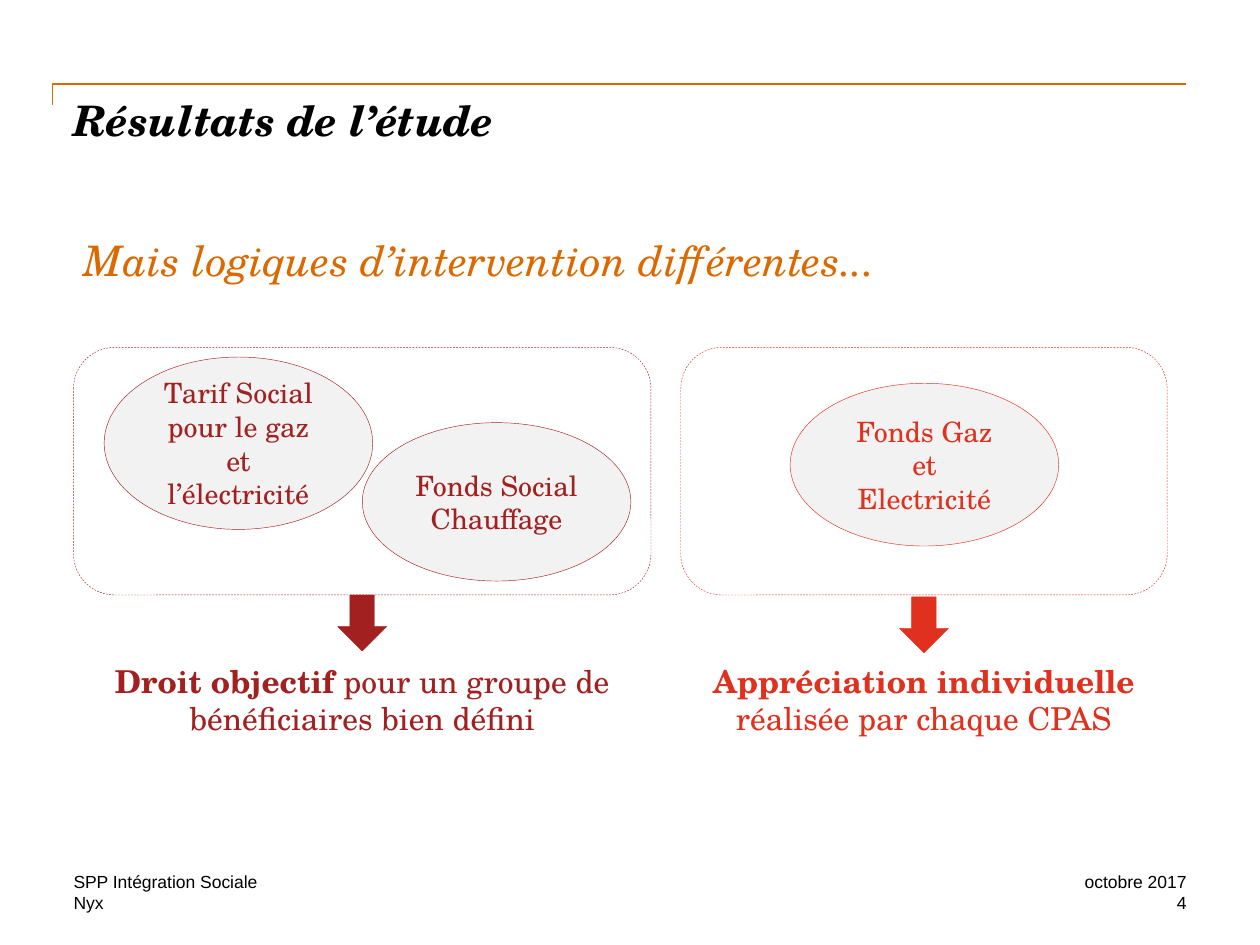
from lxml import etree
from pptx import Presentation
from pptx.dml.color import RGBColor
from pptx.enum import dml, shapes, text
from pptx.oxml.ns import qn
from pptx.util import Pt

SERIF, SANS = "TeX Gyre Schola", "Arial"
BLACK, ORANGE, GREY = "000000", "DC6900", "F2F2F2"
LEFT, RIGHT = 42, 678
SHAPE = shapes.MSO_SHAPE
ALIGN, ANCHOR = text.PP_ALIGN, text.MSO_ANCHOR

# Content: lengths in points, boxes as (left, top, width, height)
TITLE = "Résultats de l’étude"
SUBTITLE = "Mais logiques d’intervention différentes..."
FOOTER = [  # words, top, width, alignment
    ("SPP Intégration Sociale", 498, 414, ALIGN.LEFT),
    ("Nyx", 510, 204, ALIGN.LEFT),
    ("octobre 2017", 498, 120, ALIGN.RIGHT),
    ("4", 510, 120, ALIGN.RIGHT),
]
GROUPS = [
    dict(color="A32020", left=42, width=330, caption_width=300, arrow_top=340,
         funds=[("Tarif Social pour le gaz et l’électricité", 59.5, 204, 98.5),
                ("Fonds Social Chauffage", 207, 241.5, 90.5)],
         caption=("Droit objectif", " pour un groupe de bénéficiaires bien défini")),
    dict(color="E0301E", left=389, width=278, caption_width=268, arrow_top=341,
         funds=[("Fonds Gaz et Electricité", 451.5, 219, 93)],
         caption=("Appréciation individuelle ", "réalisée par chaque CPAS")),
]
FRAME_TOP, FRAME_HEIGHT = 198.5, 141.5
FUND_WIDTH = 153.5
ARROW_WIDTH, ARROW_HEIGHT = 28, 32
CAPTION_TOP, CAPTION_HEIGHT = 378, 63


def rgb(color):
    return RGBColor.from_string(color)


def set_font(font, name, size, color, bold=False, italic=False):
    font.name, font.size = name, Pt(size)
    font.bold, font.italic = bold, italic
    font.color.rgb = rgb(color)


def prepare(tf, margin=True, anchor=ANCHOR.TOP):
    tf.word_wrap, tf.auto_size = True, text.MSO_AUTO_SIZE.NONE
    tf.vertical_anchor = anchor
    if not margin:
        tf.margin_left = tf.margin_top = tf.margin_right = tf.margin_bottom = 0
    return tf.paragraphs[0]


def add_text(box, runs, align=ALIGN.LEFT, anchor=ANCHOR.TOP):
    tf = s.shapes.add_textbox(*map(Pt, box)).text_frame
    p = prepare(tf, False, anchor)
    p.alignment = align
    for words in runs:
        p.add_run().text = words
    return p


def add_shape(kind, box, color, fill=None):
    sp = s.shapes.add_shape(kind, *map(Pt, box))
    sp.shadow.inherit = False
    if fill:
        sp.fill.solid()
        sp.fill.fore_color.rgb = rgb(fill)
    else:
        sp.fill.background()
    sp.line.color.rgb = rgb(color)
    sp.line.width = Pt(0.25)
    return sp


prs = Presentation()
prs.slide_width, prs.slide_height = Pt(720), Pt(540)
s = prs.slides.add_slide(prs.slide_layouts[5])

# Corner rule: one bend, from the right end to the left tick
rule = s.shapes.add_connector(shapes.MSO_CONNECTOR.ELBOW, Pt(RIGHT), Pt(48), Pt(30), Pt(60))
rule.line.color.rgb = rgb(ORANGE)
rule.line.width = Pt(1)
props = rule._element.spPr
props.find(qn("a:prstGeom")).set("prst", "bentConnector2")
etree.SubElement(props, qn("a:effectLst"))

# Title and subtitle
title = s.shapes.title
title.left, title.top, title.width, title.height = map(Pt, (LEFT, 54, 636, 72))
title.text_frame.text = TITLE
p = prepare(title.text_frame, False)
p.alignment = ALIGN.LEFT
set_font(p.font, SERIF, 24, BLACK, bold=True, italic=True)

p = add_text((48, 134, 612, 57), [SUBTITLE])
set_font(p.font, SERIF, 24, ORANGE, italic=True)

# Groups: funds in a dashed frame, an arrow and a caption on its centre line
for group in GROUPS:
    color = group["color"]
    center = group["left"] + group["width"] / 2
    for name, left, top, height in group["funds"]:
        sp = add_shape(SHAPE.OVAL, (left, top, FUND_WIDTH, height), color, GREY)
        sp.text_frame.text = name
        p = prepare(sp.text_frame, anchor=ANCHOR.MIDDLE)
        p.alignment = ALIGN.CENTER
        set_font(p.font, SERIF, 16, color)

    frame = add_shape(SHAPE.ROUNDED_RECTANGLE,
                      (group["left"], FRAME_TOP, group["width"], FRAME_HEIGHT), color)
    frame.line.dash_style = dml.MSO_LINE.DASH

    add_shape(SHAPE.DOWN_ARROW, (center - ARROW_WIDTH / 2, group["arrow_top"],
                                 ARROW_WIDTH, ARROW_HEIGHT), color, color)

    width = group["caption_width"]
    p = add_text((center - width / 2, CAPTION_TOP, width, CAPTION_HEIGHT),
                 group["caption"], ALIGN.CENTER)
    set_font(p.font, SERIF, 18, color)
    p.runs[0].font.bold = True

# Footer
for words, top, width, align in FOOTER:
    left = LEFT if align == ALIGN.LEFT else RIGHT - width
    p = add_text((left, top, width, 12), [words], align, ANCHOR.BOTTOM)
    set_font(p.font, SANS, 10, BLACK)

prs.save("out.pptx")
